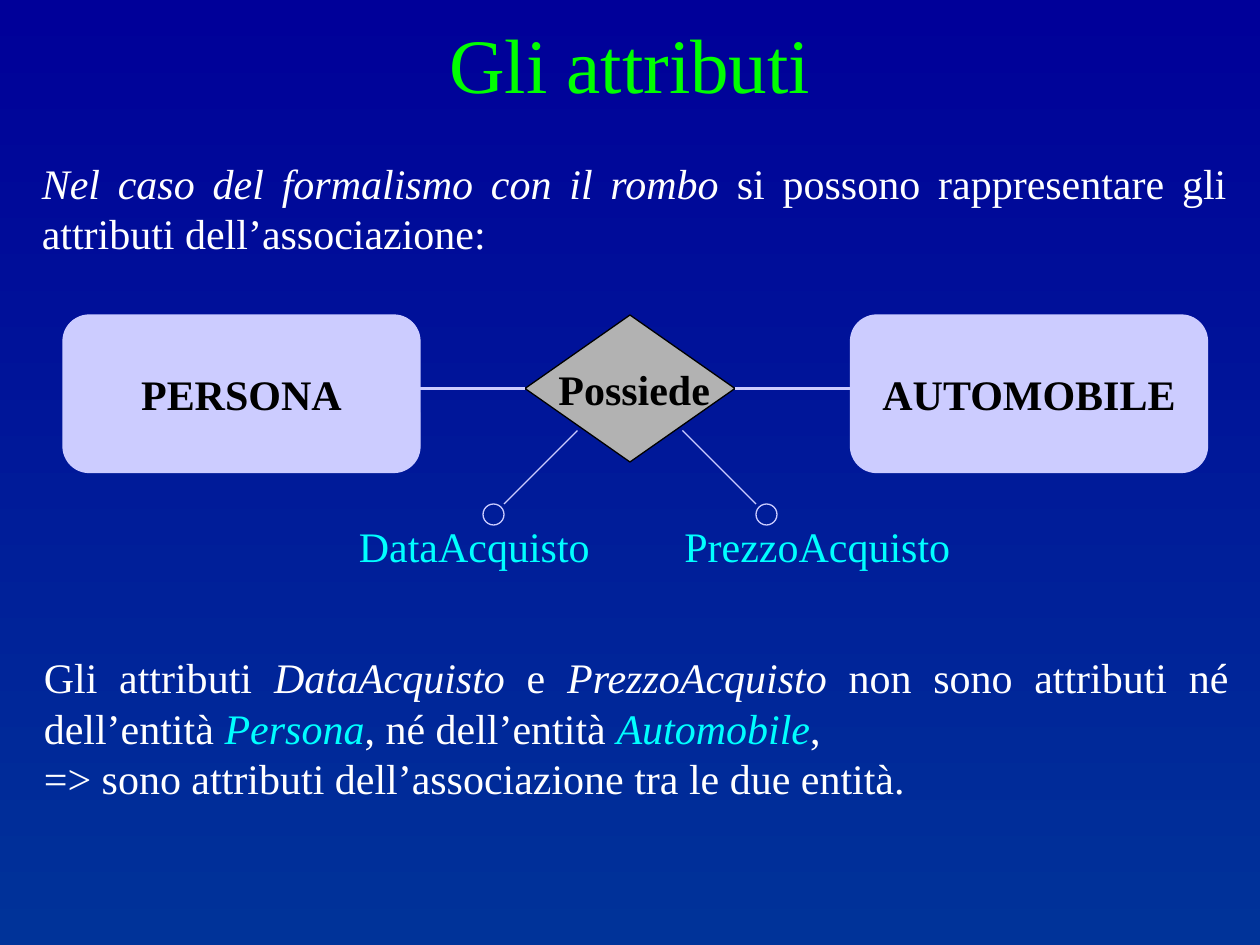
"""Build the slide on attributes of an entity-relationship association."""
import dataclasses
import typing

import pptx
import pptx.dml.color
import pptx.enum.shapes
import pptx.enum.text
import pptx.oxml.ns
import pptx.util
from lxml import etree

EMU_PER_PX = 7620
SHAPES = pptx.enum.shapes.MSO_SHAPE
ALIGN = pptx.enum.text.PP_ALIGN


@dataclasses.dataclass(frozen=True)
class Theme:
    font: str = "Times New Roman"
    title_size: int = 44
    body_size: int = 24
    title: str = "00FF00"
    body: str = "FFFFFF"
    accent: str = "00FFFF"
    dark: str = "000000"
    entity: str = "CCCCFF"
    diamond: str = "B2B2B2"
    background_top: str = "000099"
    background_bottom: str = "003399"
    thin: float = 0.75
    thick: float = 1.75


THEME = Theme()


class Box(typing.NamedTuple):
    left: int
    top: int
    width: int
    height: int


class Run(typing.NamedTuple):
    text: str
    italic: bool = False
    color: typing.Optional[str] = None


class Entity(typing.NamedTuple):
    name: str
    box: Box


class Attribute(typing.NamedTuple):
    name: str
    label: Box
    circle: Box
    line: tuple[int, int, int, int]


Paragraphs = list[list[Run]]

ENTITIES = [
    Entity("PERSONA", Box(60, 300, 340, 150)),
    Entity("AUTOMOBILE", Box(810, 300, 340, 150)),
]
ATTRIBUTES = [
    Attribute("DataAcquisto", Box(330, 490, 244, 60), Box(460, 480, 20, 20), (550, 410, 480, 480)),
    Attribute("PrezzoAcquisto", Box(640, 490, 277, 60), Box(720, 480, 20, 20), (650, 410, 720, 480)),
]
DIAMOND = Box(500, 300, 200, 140)
LINKS = [(700, 370, 810, 370), (400, 370, 500, 370)]

INTRODUCTION: Paragraphs = [[
    Run("Nel caso del formalismo con il rombo", italic=True),
    Run(" si possono rappresentare gli attributi dell’associazione:"),
]]
CONCLUSION: Paragraphs = [
    [
        Run("Gli attributi "),
        Run("DataAcquisto", italic=True),
        Run(" e "),
        Run("PrezzoAcquisto", italic=True),
        Run(" non sono attributi né dell’entità "),
        Run("Persona", italic=True, color=THEME.accent),
        Run(", né dell’entità "),
        Run("Automobile", italic=True, color=THEME.accent),
        Run(","),
    ],
    [Run("=> sono attributi dell’associazione tra le due entità.")],
]


def px(length: int) -> pptx.util.Emu:
    return pptx.util.Emu(length * EMU_PER_PX)


def rgb(color: str) -> pptx.dml.color.RGBColor:
    return pptx.dml.color.RGBColor.from_string(color)


def write_text(frame, text: typing.Union[str, Paragraphs], *, color: str = THEME.body,
               size: int = THEME.body_size, bold: bool = False,
               align=ALIGN.LEFT, wrap: bool = False) -> None:
    frame.word_wrap = wrap
    paragraphs = [[Run(text)]] if isinstance(text, str) else text
    for index, runs in enumerate(paragraphs):
        paragraph = frame.add_paragraph() if index else frame.paragraphs[0]
        paragraph.alignment = align
        for item in runs:
            run = paragraph.add_run()
            run.text = item.text
            run.font.name = THEME.font
            run.font.size = pptx.util.Pt(size)
            run.font.bold = bold
            run.font.italic = item.italic
            run.font.color.rgb = rgb(item.color or color)


def add_text(slide, box: Box, text: typing.Union[str, Paragraphs], **text_format) -> None:
    frame = slide.shapes.add_textbox(*map(px, box)).text_frame
    write_text(frame, text, **text_format)
    frame.auto_size = pptx.enum.text.MSO_AUTO_SIZE.SHAPE_TO_FIT_TEXT


def add_shape(slide, kind, box: Box, line: str, fill: typing.Optional[str] = None):
    shape = slide.shapes.add_shape(kind, *map(px, box))
    shape.shadow.inherit = False
    if fill:
        shape.fill.solid()
        shape.fill.fore_color.rgb = rgb(fill)
    else:
        shape.fill.background()
    shape.line.color.rgb = rgb(line)
    shape.line.width = pptx.util.Pt(THEME.thin)
    return shape


def add_line(slide, ends: tuple[int, int, int, int], width: float) -> None:
    connector = slide.shapes.add_connector(
        pptx.enum.shapes.MSO_CONNECTOR.STRAIGHT, *map(px, ends))
    connector.line.color.rgb = rgb(THEME.entity)
    connector.line.width = pptx.util.Pt(width)
    etree.SubElement(connector._element.spPr, pptx.oxml.ns.qn("a:effectLst"))


def add_entity(slide, entity: Entity) -> None:
    shape = add_shape(slide, SHAPES.ROUNDED_RECTANGLE, entity.box, THEME.entity, THEME.entity)
    write_text(shape.text_frame, entity.name, color=THEME.dark, bold=True, align=ALIGN.CENTER)
    shape.text_frame.vertical_anchor = pptx.enum.text.MSO_ANCHOR.MIDDLE


def add_attribute(slide, attribute: Attribute) -> None:
    add_line(slide, attribute.line, THEME.thin)
    add_shape(slide, SHAPES.OVAL, attribute.circle, THEME.entity)
    add_text(slide, attribute.label, attribute.name, color=THEME.accent)


def paint_background(slide) -> None:
    fill = slide.background.fill
    fill.gradient()
    fill.gradient_angle = 270
    for stop, color in zip(fill.gradient_stops, (THEME.background_top, THEME.background_bottom)):
        stop.color.rgb = rgb(color)


def main() -> None:
    presentation = pptx.Presentation()
    presentation.slide_width, presentation.slide_height = px(1200), px(900)
    slide = presentation.slides.add_slide(presentation.slide_layouts[6])
    paint_background(slide)
    add_text(slide, Box(70, 10, 1060, 100), "Gli attributi", color=THEME.title,
             size=THEME.title_size, align=ALIGN.CENTER, wrap=True)
    add_text(slide, Box(28, 144, 1152, 108), INTRODUCTION, align=ALIGN.JUSTIFY, wrap=True)
    for entity in ENTITIES:
        add_entity(slide, entity)
    add_shape(slide, SHAPES.FLOWCHART_DECISION, DIAMOND, THEME.dark, THEME.diamond)
    add_text(slide, Box(520, 340, 174, 60), "Possiede", color=THEME.dark, bold=True)
    for link in LINKS:
        add_line(slide, link, THEME.thick)
    for attribute in ATTRIBUTES:
        add_attribute(slide, attribute)
    add_text(slide, Box(30, 615, 1152, 156), CONCLUSION, align=ALIGN.JUSTIFY, wrap=True)
    presentation.save("out.pptx")


if __name__ == "__main__":
    main()
